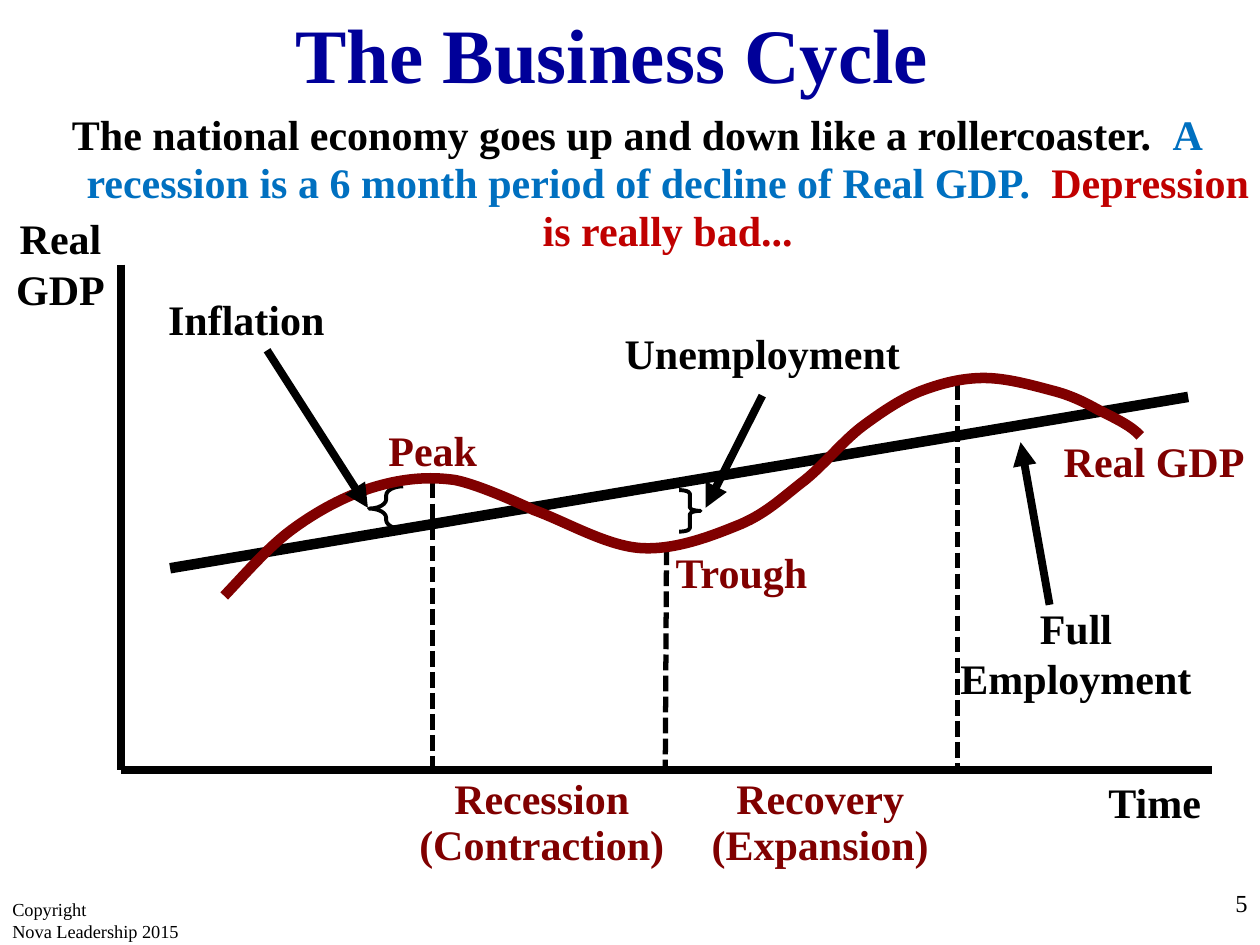
from dataclasses import dataclass

from lxml import etree
from pptx import Presentation
from pptx.dml.color import RGBColor
from pptx.enum.dml import MSO_LINE
from pptx.enum.shapes import MSO_CONNECTOR, MSO_SHAPE
from pptx.enum.text import MSO_ANCHOR, MSO_AUTO_SIZE, PP_ALIGN
from pptx.oxml.ns import qn
from pptx.util import Inches, Pt

STRAIGHT = MSO_CONNECTOR.STRAIGHT
DASHED = MSO_LINE.SQUARE_DOT
LEFT_BRACE, RIGHT_BRACE = MSO_SHAPE.LEFT_BRACE, MSO_SHAPE.RIGHT_BRACE
LEFT, CENTER, RIGHT = PP_ALIGN.LEFT, PP_ALIGN.CENTER, PP_ALIGN.RIGHT
TOP = MSO_ANCHOR.TOP
NO_AUTO_SIZE = MSO_AUTO_SIZE.NONE


@dataclass(frozen=True)
class Theme:
    font: str = "Times New Roman"
    black: str = "000000"
    white: str = "FFFFFF"
    navy: str = "000099"
    blue: str = "0070C0"
    red: str = "C00000"
    maroon: str = "800000"
    title_size: float = 44
    text_size: float = 24
    number_size: float = 14
    footer_size: float = 10.5
    dash_width: float = 3
    brace_width: float = 2.25
    axis_width: float = 4.5
    trend_width: float = 6


THEME = Theme()


def write_text(frame, lines, *, size=THEME.text_size, color=THEME.black, bold=True,
               align=CENTER, spacing=1.0, wrap=True):
    """Fill a frame; each line is a string or a list of (text, color) runs."""
    frame.word_wrap = wrap
    frame.auto_size = NO_AUTO_SIZE
    frame.vertical_anchor = TOP
    for index, line in enumerate(lines):
        paragraph = frame.add_paragraph() if index else frame.paragraphs[0]
        paragraph.alignment = align
        paragraph.line_spacing = spacing
        paragraph.space_before = Pt(0)
        runs = [(line, color)] if isinstance(line, str) else line
        for text, run_color in runs:
            run = paragraph.add_run()
            run.text = text
            run.font.name = THEME.font
            run.font.size = Pt(size)
            run.font.bold = bold
            run.font.color.rgb = RGBColor.from_string(run_color)


class SlideBuilder:
    def __init__(self, slide):
        self.slide = slide

    def placeholder(self, index, box, lines, **text_format):
        shape = self.slide.placeholders[index]
        shape.left, shape.top, shape.width, shape.height = map(Inches, box)
        write_text(shape.text_frame, lines, **text_format)
        return shape

    def text(self, box, *lines, **text_format):
        shape = self.slide.shapes.add_textbox(*map(Inches, box))
        write_text(shape.text_frame, lines, **text_format)

    def style_line(self, line, width, color=THEME.black):
        line.color.rgb = RGBColor.from_string(color)
        line.width = Pt(width)

    def line(self, start, end, width, dash=None, arrow=False):
        connector = self.slide.shapes.add_connector(STRAIGHT, *map(Inches, start + end))
        self.style_line(connector.line, width)
        if dash:
            connector.line.dash_style = dash
        if arrow:
            outline = connector.line._get_or_add_ln()
            etree.SubElement(outline, qn("a:tailEnd"), type="triangle")
        etree.SubElement(connector._element.spPr, qn("a:effectLst"))

    def brace(self, kind, box, adjustments):
        shape = self.slide.shapes.add_shape(kind, *map(Inches, box))
        shape.shadow.inherit = False
        shape.fill.background()
        self.style_line(shape.line, THEME.brace_width)
        for index, value in enumerate(adjustments):
            shape.adjustments[index] = value

    def curve(self, start, segments, width, color):
        """Draw a chain of cubic curves given as (control, control, end) points."""
        builder = self.slide.shapes.build_freeform(*map(Inches, start))
        ends = [tuple(map(Inches, segment[-1])) for segment in segments]
        builder.add_line_segments(ends, close=False)
        shape = builder.convert_to_shape()
        straight_parts = list(shape._element.iter(qn("a:lnTo")))
        for part, segment in zip(straight_parts, segments):
            cubic = etree.Element(qn("a:cubicBezTo"))
            for x, y in segment:
                etree.SubElement(cubic, qn("a:pt"), x=str(Inches(x) - shape.left),
                                 y=str(Inches(y) - shape.top))
            part.getparent().replace(part, cubic)
        shape.shadow.inherit = False
        shape.fill.background()
        self.style_line(shape.line, width, color)


def add_heading(builder):
    builder.placeholder(0, (2.22, 0, 5.43, 0.84), ["The Business Cycle "],
                        size=THEME.title_size, color=THEME.navy, wrap=False)
    summary = [("The national economy goes up and down like a rollercoaster.  ", THEME.black),
               ("A recession is a 6 month period of decline of Real GDP.  ", THEME.blue),
               ("Depression is really bad...", THEME.red)]
    body = builder.placeholder(1, (0.05, 0.84, 10, 1.25), [summary], spacing=0.95)
    body.fill.solid()
    body.fill.fore_color.rgb = RGBColor.from_string(THEME.white)
    properties = body.text_frame.paragraphs[0]._p.get_or_add_pPr()
    properties.set("marL", str(Inches(0.5)))
    properties.set("indent", str(Inches(-0.5)))
    etree.SubElement(properties, qn("a:buNone"))


def add_graph(builder):
    axis_left, axis_bottom = 0.96, 6.11
    for x, top, foot in ((3.43, 3.83, 3.43), (5.29, 4.36, 5.28), (7.6, 3.05, 7.6)):
        builder.line((x, top), (foot, axis_bottom), THEME.dash_width, dash=DASHED)
    builder.brace(RIGHT_BRACE, (5.39, 3.89, 0.17, 0.33), (0.16, 0.5))
    builder.brace(LEFT_BRACE, (2.93, 3.86, 0.27, 0.34), (0.27, 0.52))
    builder.line((1.35, 4.51), (9.43, 3.15), THEME.trend_width)
    real_gdp = [
        ((1.97, 4.53), (2.15, 4.32), (2.35, 4.18)),
        ((2.56, 4.03), (2.78, 3.92), (2.99, 3.86)),
        ((3.2, 3.8), (3.4, 3.78), (3.61, 3.81)),
        ((3.82, 3.85), (4.24, 4.05), (4.24, 4.05)),
        ((4.49, 4.14), (4.81, 4.33), (5.08, 4.35)),
        ((5.36, 4.37), (5.66, 4.25), (5.88, 4.16)),
        ((6.09, 4.07), (6.22, 3.94), (6.39, 3.81)),
        ((6.55, 3.68), (6.69, 3.5), (6.85, 3.38)),
        ((7, 3.27), (7.16, 3.16), (7.32, 3.1)),
        ((7.48, 3.04), (7.64, 3), (7.81, 3)),
        ((7.99, 3), (8.2, 3.06), (8.35, 3.1)),
        ((8.51, 3.14), (8.62, 3.2), (8.73, 3.26)),
        ((8.85, 3.32), (8.98, 3.38), (9.05, 3.46)),
    ]
    builder.curve((1.78, 4.73), real_gdp, THEME.trend_width, THEME.maroon)
    origin = (axis_left, axis_bottom)
    builder.line((axis_left, 2.1), origin, THEME.axis_width)
    builder.line(origin, (9.62, axis_bottom), THEME.axis_width)
    for start, end in (((6.05, 3.14), (5.6, 4.03)), ((8.33, 4.8), (8.1, 3.51)),
                       ((2.12, 2.78), (2.92, 4.03))):
        builder.line(start, end, THEME.axis_width, arrow=True)


def add_labels(builder):
    for text, box in (("Inflation", (1.12, 2.28, 1.67, 0.51)),
                      ("Unemployment", (4.82, 2.55, 2.46, 0.91)),
                      ("Full Employment", (7.31, 4.73, 2.46, 0.91)),
                      ("Time", (8.33, 6.11, 1.67, 0.51)),
                      ("Real GDP", (-0.21, 1.64, 1.38, 0.91))):
        builder.text(box, text)
    for text, box in (("Peak", (2.6, 3.32, 1.67, 0.51)),
                      ("Trough", (5.05, 4.29, 1.67, 0.51)),
                      ("Real GDP", (7.93, 3.41, 2.46, 0.51))):
        builder.text(box, text, color=THEME.maroon)
    for text, left in (("Recession (Contraction)", 3.07), ("Recovery (Expansion)", 5.28)):
        builder.text((left, 6.13, 2.46, 0.83), text, color=THEME.maroon, spacing=0.9)
    builder.text((7.92, 7, 2.08, 0.5), "5", size=THEME.number_size, bold=False, align=RIGHT)
    builder.text((0, 7.08, 1.67, 0.5), "Copyright", "Nova Leadership 2015",
                 size=THEME.footer_size, bold=False, align=LEFT)


def main():
    presentation = Presentation()
    presentation.slide_width, presentation.slide_height = Inches(10), Inches(7.5)
    builder = SlideBuilder(presentation.slides.add_slide(presentation.slide_layouts[1]))
    add_heading(builder)
    add_graph(builder)
    add_labels(builder)
    presentation.save("out.pptx")


if __name__ == "__main__":
    main()
